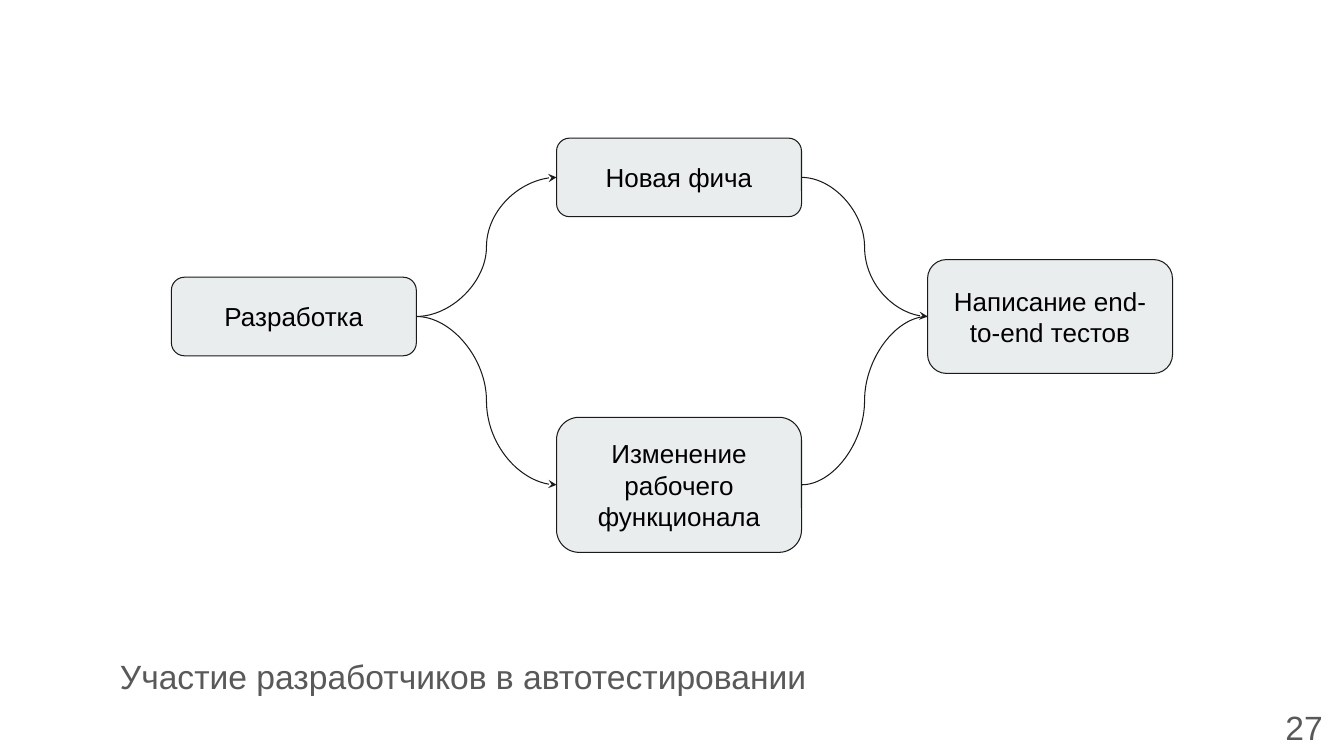
import pptx
import pptx.dml.color
import pptx.enum.shapes
import pptx.enum.text
import pptx.oxml
import pptx.oxml.ns
import pptx.util

WIDTH, HEIGHT = 13.33, 7.5
COLORS = {"box": "E9EDEE", "line": "1A1A1A", "label": "000000", "caption": "595959"}
COLUMNS = {"start": 1.7, "middle": 5.52, "end": 9.2}  # left edges
ROWS = {"top": 1.76, "centre": 3.14, "bottom": 4.81}  # centre lines
BOX_WIDTH = 2.43
LINE_WIDTH = 0.75
INSET = 0.13
RIGHT_SITE, LEFT_SITE = 3, 1
ALIGN = pptx.enum.text.PP_ALIGN


def inches(*lengths):
    return [pptx.util.Inches(length) for length in lengths]


def color(name):
    return pptx.dml.color.RGBColor.from_string(COLORS[name])


def write(shape, text, size, color_name, align):
    frame = shape.text_frame
    frame.word_wrap = True
    frame.auto_size = pptx.enum.text.MSO_AUTO_SIZE.NONE
    frame.vertical_anchor = pptx.enum.text.MSO_ANCHOR.MIDDLE
    frame.margin_left = frame.margin_right = pptx.util.Inches(INSET)
    frame.margin_top = frame.margin_bottom = pptx.util.Inches(INSET)
    para = frame.paragraphs[0]
    para.alignment = align
    para.space_before = pptx.util.Pt(0)
    span = para.add_run()
    span.text = text
    span.font.name = "Arial"
    span.font.size = pptx.util.Pt(size)
    span.font.color.rgb = color(color_name)
    return para


def fill_caption(page, text):
    """Turn the body placeholder into a plain line of text below the diagram."""
    caption = page.placeholders[1]
    caption.left, caption.top, caption.width, caption.height = inches(
        1.06, HEIGHT * 0.85, 11.22, 0.67)
    para = write(caption, text, 24, "caption", ALIGN.LEFT)
    properties = para._p.get_or_add_pPr()
    properties.set("marL", "0")
    properties.set("indent", "0")
    pptx.oxml.ns.qn("a:buNone")
    properties.append(pptx.oxml.parse_xml(
        f'<a:buNone {pptx.oxml.ns.nsdecls("a")}/>'))


def add_page_number(page, text):
    box = page.shapes.add_textbox(*inches(12.45, 6.93, 0.8, 0.57))
    write(box, text, 24, "caption", ALIGN.RIGHT)


def add_step(page, text, column, row, height=0.78):
    """Add a rounded box centred on the line of its row."""
    box = page.shapes.add_shape(
        pptx.enum.shapes.MSO_SHAPE.ROUNDED_RECTANGLE,
        *inches(COLUMNS[column], ROWS[row] - height / 2, BOX_WIDTH, height))
    box.shadow.inherit = False
    box.fill.solid()
    box.fill.fore_color.rgb = color("box")
    box.line.color.rgb = color("line")
    box.line.width = pptx.util.Pt(LINE_WIDTH)
    write(box, text, 18.6, "label", ALIGN.CENTER)
    return box


def connect(page, source, target, arrow=True):
    link = page.shapes.add_connector(
        pptx.enum.shapes.MSO_CONNECTOR.CURVE, 0, 0, 0, 0)
    link.begin_connect(source, RIGHT_SITE)
    link.end_connect(target, LEFT_SITE)
    link.line.color.rgb = color("line")
    link.line.width = pptx.util.Pt(LINE_WIDTH)
    namespace = pptx.oxml.ns.nsdecls("a")
    if arrow:
        link.line._get_or_add_ln().append(
            pptx.oxml.parse_xml(f'<a:tailEnd {namespace} type="stealth"/>'))
    link._element.spPr.append(pptx.oxml.parse_xml(f"<a:effectLst {namespace}/>"))


def main():
    deck = pptx.Presentation()
    deck.slide_width, deck.slide_height = inches(WIDTH, HEIGHT)
    page = deck.slides.add_slide(deck.slide_layouts[1])
    title = page.shapes.title._element
    title.getparent().remove(title)

    fill_caption(page, "Участие разработчиков в автотестировании")
    add_page_number(page, "27")

    development = add_step(page, "Разработка", "start", "centre")
    feature = add_step(page, "Новая фича", "middle", "top")
    change = add_step(page, "Изменение рабочего функционала", "middle", "bottom", 1.34)
    tests = add_step(page, "Написание end-to-end тестов", "end", "centre", 1.13)

    connect(page, development, feature)
    connect(page, development, change)
    connect(page, feature, tests)
    connect(page, change, tests, arrow=False)

    deck.save("out.pptx")


if __name__ == "__main__":
    main()
